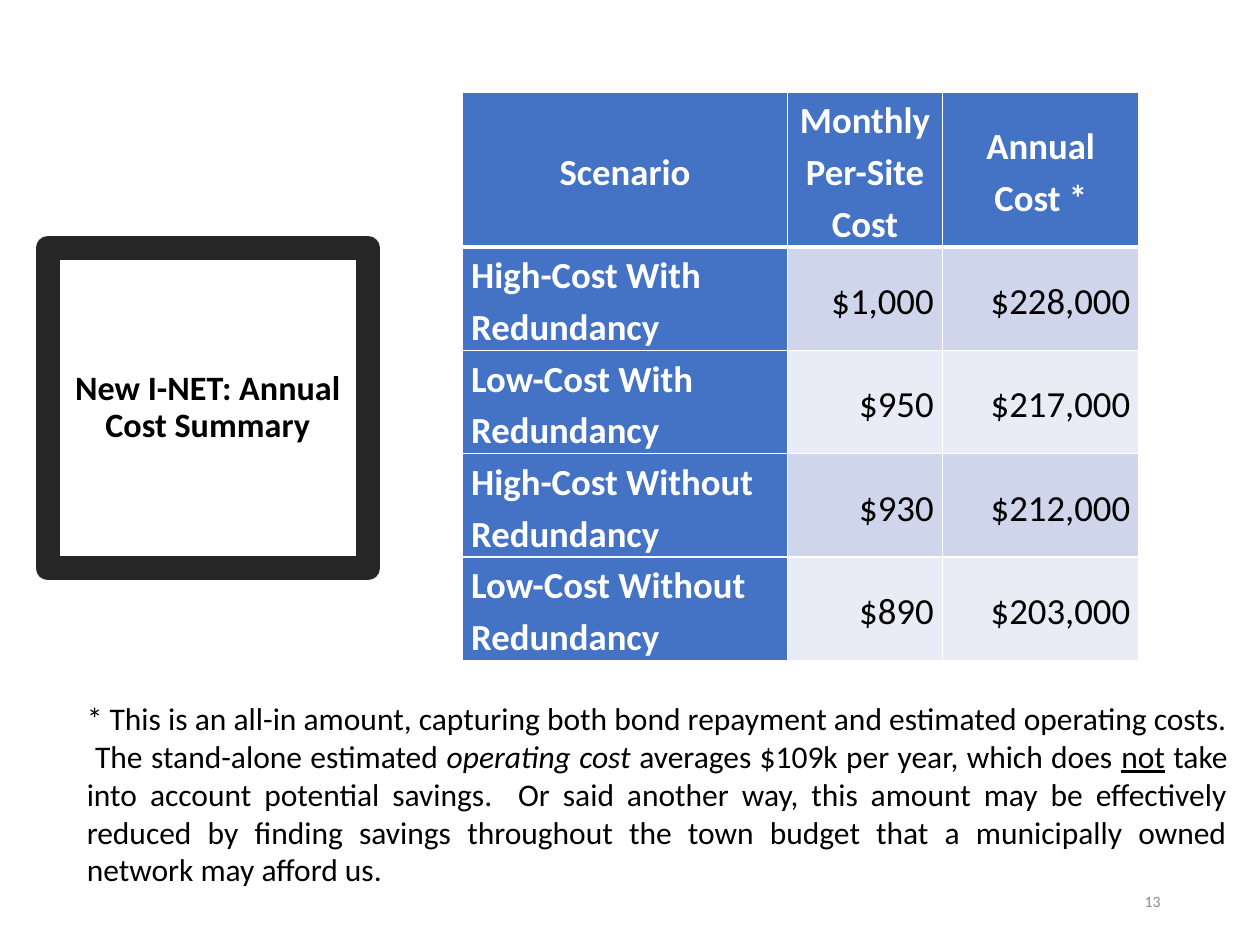
from lxml.etree import SubElement as Sub
from pptx import Presentation
from pptx.dml.color import RGBColor as Rgb
from pptx.enum.shapes import MSO_SHAPE as Shape
from pptx.enum.text import MSO_ANCHOR as Anchor, PP_ALIGN as Align
from pptx.oxml.ns import qn
from pptx.util import Inches, Pt

COLORS = {
    "white": "FFFFFF", "black": "000000", "frame": "262626", "blue": "4472C4",
    "band": "CFD5EA", "pale": "E9EBF5", "gray": "8C8C8C",
}
HEAD = ["Scenario", "Monthly Per-Site Cost", "Annual Cost *"]
ROWS = [
    ["High-Cost With Redundancy", "$1,000", "$228,000"],
    ["Low-Cost With Redundancy", "$950", "$217,000"],
    ["High-Cost Without Redundancy", "$930", "$212,000"],
    ["Low-Cost Without Redundancy", "$890", "$203,000"],
]
NOTE = [
    ("* This is an all-in amount, capturing both bond repayment and estimated "
     "operating costs.  The stand-alone estimated ", ""),
    ("operating cost", "italic"),
    (" averages $109k per year, which does ", ""),
    ("not", "underline"),
    (" take into account potential savings.  Or said another way, this amount "
     "may be effectively reduced by finding savings throughout the town budget "
     "that a municipally owned network may afford us.", ""),
]


def rgb(name):
    return Rgb.from_string(COLORS[name])


class Deck:
    font = "Calibri"

    def __init__(self):
        self.prs = Presentation()
        self.prs.slide_width, self.prs.slide_height = Inches(10), Inches(7.5)
        self.slide = self.prs.slides.add_slide(self.prs.slide_layouts[6])

    def style(self, para, size, color, align, bold=False, gap=None):
        para.alignment = align
        para.line_spacing = gap
        for run in para.runs:
            font = run.font
            font.name, font.size, font.bold = self.font, Pt(size), bold
            font.color.rgb = rgb(color)

    def title(self, text, box):
        shape = self.slide.shapes.add_shape(Shape.RECTANGLE, *map(Inches, box))
        shape.shadow.inherit = False
        shape.fill.solid()
        shape.fill.fore_color.rgb = rgb("white")
        shape.line.color.rgb = rgb("frame")
        shape.line.width = Pt(13.75)
        Sub(shape.line._get_or_add_ln(), qn("a:round"))
        frame = shape.text_frame
        frame.text = text
        frame.word_wrap = True
        frame.vertical_anchor = Anchor.MIDDLE
        self.style(frame.paragraphs[0], 19.5, "black", Align.CENTER, True, 0.9)

    def text(self, runs, box, size, color, align, anchor=Anchor.TOP):
        frame = self.slide.shapes.add_textbox(*map(Inches, box)).text_frame
        frame.word_wrap = True
        frame.vertical_anchor = anchor
        para = frame.paragraphs[0]
        for words, look in runs:
            run = para.add_run()
            run.text = words
            if look:
                setattr(run.font, look, True)
        self.style(para, size, color, align)

    def edges(self, cell, row):
        props = cell._tc.get_or_add_tcPr()
        thick = {"lnB": 3} if row == 0 else {"lnT": 3} if row == 1 else {}
        for side in ("lnL", "lnR", "lnT", "lnB"):
            line = Sub(props, qn(f"a:{side}"), w=str(Pt(thick.get(side, 1))))
            fill = Sub(line, qn("a:solidFill"))
            Sub(fill, qn("a:srgbClr"), val=COLORS["white"])

    def cell(self, cell, text, row, col):
        self.edges(cell, row)
        label = row == 0 or col == 0
        cell.fill.solid()
        cell.fill.fore_color.rgb = rgb(
            "blue" if label else "band" if row % 2 else "pale")
        cell.margin_left = cell.margin_right = Inches(0.07)
        cell.margin_top = cell.margin_bottom = 0
        cell.vertical_anchor = Anchor.MIDDLE
        cell.text_frame.text = text
        align = Align.CENTER if row == 0 else Align.RIGHT if col else Align.LEFT
        self.style(cell.text_frame.paragraphs[0], 21,
                   "white" if label else "black", align, label, 1.15)

    def table(self, rows, box, widths, heights):
        table = self.slide.shapes.add_table(
            len(rows), len(widths), *map(Inches, box)).table
        for col, width in zip(table.columns, widths):
            col.width = Inches(width)
        for line, height in zip(table.rows, heights):
            line.height = Inches(height)
        for r, row in enumerate(rows):
            for c, text in enumerate(row):
                self.cell(table.cell(r, c), text, r, c)


def main():
    deck = Deck()
    deck.title("New I-NET: Annual Cost Summary", (0.38, 1.97, 2.54, 2.54))
    deck.table([HEAD] + ROWS, (3.67, 0.73, 5.37, 4.43),
               [2.58, 1.23, 1.56], [1.21] + [0.81] * len(ROWS))
    deck.text(NOTE, (0.59, 5.5, 9.25, 1.62), 18, "black", Align.JUSTIFY)
    deck.text([("13", "")], (7.06, 6.95, 2.25, 0.4), 9, "gray",
              Align.RIGHT, Anchor.MIDDLE)
    deck.prs.save("out.pptx")


if __name__ == "__main__":
    main()
